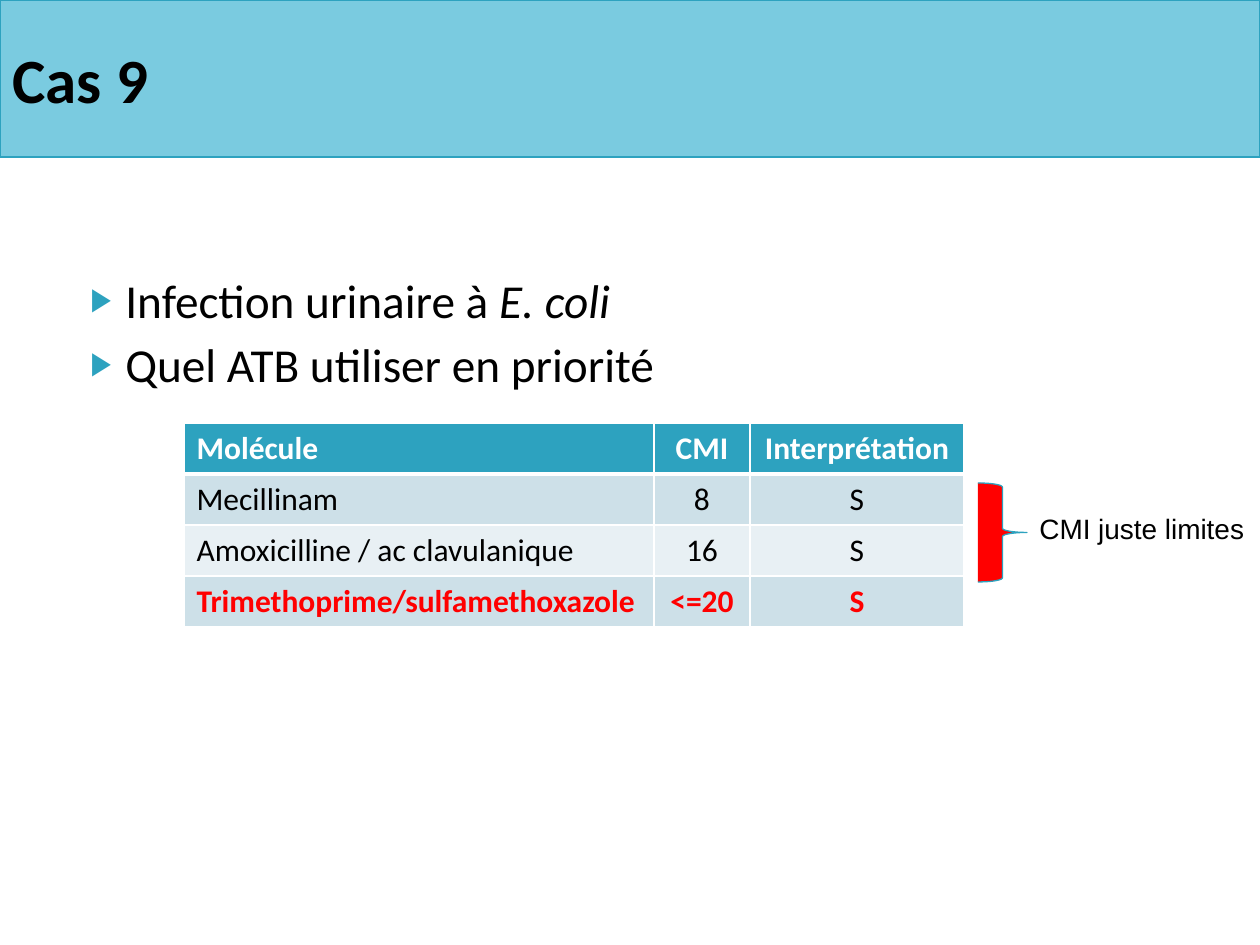
from lxml import etree
from pptx import Presentation
from pptx.dml.color import RGBColor
from pptx.enum.shapes import MSO_SHAPE
from pptx.enum.text import MSO_ANCHOR, MSO_AUTO_SIZE, PP_ALIGN
from pptx.oxml.ns import qn
from pptx.util import Emu, Pt

RECTANGLE, BRACE = MSO_SHAPE.RECTANGLE, MSO_SHAPE.RIGHT_BRACE
MIDDLE, FIT_SHAPE = MSO_ANCHOR.MIDDLE, MSO_AUTO_SIZE.SHAPE_TO_FIT_TEXT
LEFT, CENTER = PP_ALIGN.LEFT, PP_ALIGN.CENTER

BLACK = RGBColor(0x00, 0x00, 0x00)
WHITE = RGBColor(0xFF, 0xFF, 0xFF)
RED = RGBColor(0xFF, 0x00, 0x00)
TEAL = RGBColor(0x2D, 0xA2, 0xBF)
SKY = RGBColor(0x7A, 0xCB, 0xE0)
BAND_DARK = RGBColor(0xCD, 0xE0, 0xE8)
BAND_LIGHT = RGBColor(0xE8, 0xF0, 0xF4)

BULLETS = [
    [("Infection urinaire à ", False), ("E. coli", True)],
    [("Quel ATB utiliser en priorité", False)],
]
COLUMN_WIDTHS = [470, 96, 214]
ROW_HEIGHT = 51
ROWS = [
    (["Molécule", "CMI", "Interprétation"], TEAL, WHITE, True),
    (["Mecillinam", "8", "S"], BAND_DARK, BLACK, False),
    (["Amoxicilline / ac clavulanique", "16", "S"], BAND_LIGHT, BLACK, False),
    (["Trimethoprime/sulfamethoxazole", "<=20", "S"], BAND_DARK, RED, True),
]


def px(length):
    """Turn pixels into EMU."""
    return Emu(round(length * 914400 / 126))


def add_span(para, text, size, color=BLACK, font="Calibri", bold=False, italic=False):
    """Add one formatted run to a paragraph."""
    span = para.add_run()
    span.text = text
    span.font.name = font
    span.font.size = Pt(size)
    span.font.color.rgb = color
    span.font.bold = bold
    span.font.italic = italic


def add_panel(page, kind, bounds, fill):
    """Add a filled shape with a thin teal outline."""
    panel = page.shapes.add_shape(kind, *map(px, bounds))
    panel.shadow.inherit = False
    panel.fill.solid()
    panel.fill.fore_color.rgb = fill
    panel.line.color.rgb = TEAL
    panel.line.width = Pt(0.75)
    return panel


def add_title(page, text):
    """Add the title band across the top."""
    band = add_panel(page, RECTANGLE, (0, 0, 1260, 157), SKY)
    band.text_frame.vertical_anchor = MIDDLE
    para = band.text_frame.paragraphs[0]
    para.alignment = LEFT
    add_span(para, text, 36, bold=True)


def add_text_box(page, bounds):
    """Add a wrapping text box and return its frame."""
    frame = page.shapes.add_textbox(*map(px, bounds)).text_frame
    frame.word_wrap = True
    return frame


def set_bullet(para):
    """Give a paragraph a hanging teal triangle bullet."""
    props = para._p.get_or_add_pPr()
    props.set("marL", str(px(50)))
    props.set("indent", str(px(-35)))
    color = etree.SubElement(props, qn("a:buClr"))
    etree.SubElement(color, qn("a:srgbClr"), val=str(TEAL))
    etree.SubElement(props, qn("a:buSzPct"), val="68000")
    etree.SubElement(props, qn("a:buFont"), typeface="Arial")
    etree.SubElement(props, qn("a:buChar"), char="▶")


def add_bullets(page, items):
    """Add the bulleted list."""
    frame = add_text_box(page, (63, 265, 1134, 563))
    for index, item in enumerate(items):
        para = frame.add_paragraph() if index else frame.paragraphs[0]
        para.space_before = Pt(4)
        set_bullet(para)
        for text, italic in item:
            add_span(para, text, 27, italic=italic)


def set_borders(cell, top, bottom):
    """Draw white borders around a cell, widths in points."""
    props = cell._tc.get_or_add_tcPr()
    for side, width in (("L", 1), ("R", 1), ("T", top), ("B", bottom)):
        line = etree.SubElement(props, qn(f"a:ln{side}"), w=str(Pt(width)))
        fill = etree.SubElement(line, qn("a:solidFill"))
        etree.SubElement(fill, qn("a:srgbClr"), val=str(WHITE))


def add_results(page):
    """Add the table of molecules, CMI and interpretations."""
    size = (sum(COLUMN_WIDTHS), ROW_HEIGHT * len(ROWS))
    frame = page.shapes.add_table(
        len(ROWS), len(COLUMN_WIDTHS), px(184), px(423), *map(px, size))
    table = frame.table
    for column, width in zip(table.columns, COLUMN_WIDTHS):
        column.width = px(width)
    for row, (texts, fill, color, bold) in enumerate(ROWS):
        table.rows[row].height = px(ROW_HEIGHT)
        for column, text in enumerate(texts):
            cell = table.cell(row, column)
            set_borders(cell, 3 if row == 1 else 1, 3 if row == 0 else 1)
            cell.fill.solid()
            cell.fill.fore_color.rgb = fill
            para = cell.text_frame.paragraphs[0]
            para.alignment = CENTER if column else LEFT
            add_span(para, text, 18, color, bold=bold)


def add_limit_note(page):
    """Add the brace and its note beside the table."""
    add_panel(page, BRACE, (978, 483, 49, 99), RED)
    frame = add_text_box(page, (1027, 505, 233, 47))
    frame.auto_size = FIT_SHAPE
    add_span(frame.paragraphs[0], "CMI juste limites", 16, font="Arial")


def main():
    """Build and save the slide."""
    deck = Presentation()
    deck.slide_width, deck.slide_height = px(1260), px(945)
    page = deck.slides.add_slide(deck.slide_layouts[6])
    add_title(page, "Cas 9")
    add_bullets(page, BULLETS)
    add_results(page)
    add_limit_note(page)
    deck.save("out.pptx")


if __name__ == "__main__":
    main()
